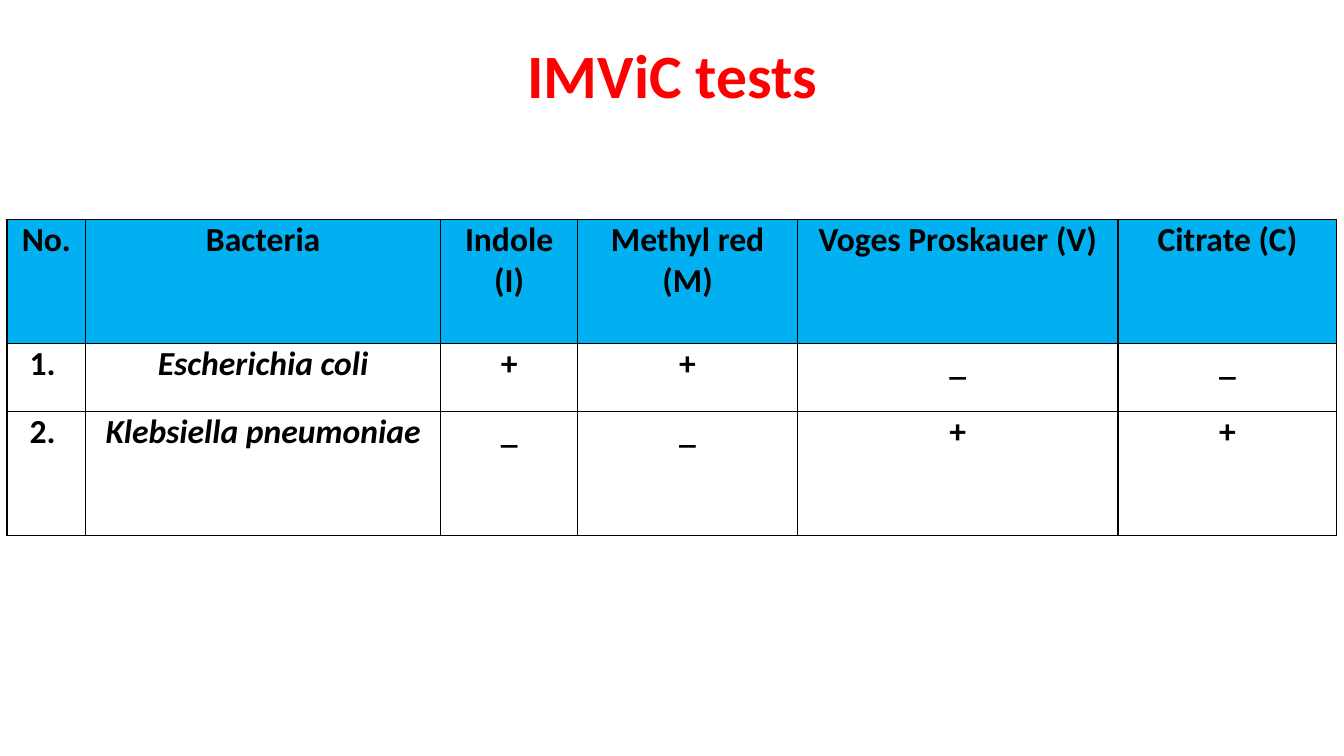
"""Build a slide with a table of IMViC test results for two bacteria."""
from dataclasses import dataclass

from lxml import etree
from pptx import Presentation
from pptx import util as u
from pptx.dml.color import RGBColor
from pptx.enum import text
from pptx.oxml.ns import qn

TITLE = "IMViC tests"
HEADERS = ["No.", "Bacteria", "Indole (I)", "Methyl red (M)", "Voges Proskauer (V)", "Citrate (C)"]
RESULTS = [
    ["1. ", "Escherichia coli", "+", "+", "_", "_"],
    ["2. ", "Klebsiella pneumoniae", "_", "_", "+", "+"],
]
COLUMN_WIDTHS = [0.78, 3.52, 1.36, 2.18, 3.18, 2.17]
ROW_HEIGHTS = [1.23, 0.67, 1.23]
SPECIES_COLUMN = 1


@dataclass(frozen=True)
class Theme:
    font: str = "Calibri"
    title_size: int = 44
    table_size: int = 24
    title_color: str = "FF0000"
    text_color: str = "000000"
    header_fill: str = "00B0F0"
    body_fill: str = "FFFFFF"
    border_color: str = "000000"
    border_width: int = 1


THEME = Theme()


def write_text(frame, content, size=THEME.table_size, color=THEME.text_color, italic=False, spacing=1.0):
    """Write one centred bold paragraph."""
    frame.word_wrap = True
    paragraph = frame.paragraphs[0]
    paragraph.alignment = text.PP_ALIGN.CENTER
    paragraph.line_spacing = spacing
    run = paragraph.add_run()
    run.text = content
    run.font.name = THEME.font
    run.font.size = u.Pt(size)
    run.font.bold = True
    run.font.italic = italic
    run.font.color.rgb = RGBColor.from_string(color)


def add_borders(cell):
    """Draw a solid line on each side of a cell."""
    properties = cell._tc.get_or_add_tcPr()
    for index, side in enumerate(("a:lnL", "a:lnR", "a:lnT", "a:lnB")):
        line = etree.Element(qn(side), w=str(u.Pt(THEME.border_width)))
        fill = etree.SubElement(line, qn("a:solidFill"))
        etree.SubElement(fill, qn("a:srgbClr"), val=THEME.border_color)
        properties.insert(index, line)


def add_title(slide):
    """Add the slide title."""
    box = slide.shapes.add_textbox(u.Inches(0.92), u.Inches(0.4), u.Inches(11.5), u.Inches(1.45))
    box.text_frame.vertical_anchor = text.MSO_ANCHOR.TOP
    write_text(box.text_frame, TITLE, size=THEME.title_size, color=THEME.title_color, spacing=0.9)


def add_results_table(slide):
    """Add the bordered table of test results."""
    rows = [HEADERS, *RESULTS]
    table = slide.shapes.add_table(
        len(rows), len(HEADERS), u.Inches(0.07), u.Inches(2.18),
        u.Inches(sum(COLUMN_WIDTHS)), u.Inches(sum(ROW_HEIGHTS)),
    ).table
    table.horz_banding = False
    for column, width in zip(table.columns, COLUMN_WIDTHS):
        column.width = u.Inches(width)
    for row, height in zip(table.rows, ROW_HEIGHTS):
        row.height = u.Inches(height)
    for row_index, values in enumerate(rows):
        is_header = row_index == 0
        for column_index, value in enumerate(values):
            cell = table.cell(row_index, column_index)
            cell.margin_left = cell.margin_right = u.Inches(0.07)
            cell.margin_top = cell.margin_bottom = 0
            cell.fill.solid()
            fill = THEME.header_fill if is_header else THEME.body_fill
            cell.fill.fore_color.rgb = RGBColor.from_string(fill)
            add_borders(cell)
            is_species = column_index == SPECIES_COLUMN and not is_header
            write_text(cell.text_frame, value, italic=is_species)


def main():
    """Build and save the presentation."""
    presentation = Presentation()
    presentation.slide_width = u.Inches(13.33)
    presentation.slide_height = u.Inches(7.5)
    slide = presentation.slides.add_slide(presentation.slide_layouts[6])
    add_title(slide)
    add_results_table(slide)
    presentation.save("out.pptx")


if __name__ == "__main__":
    main()
